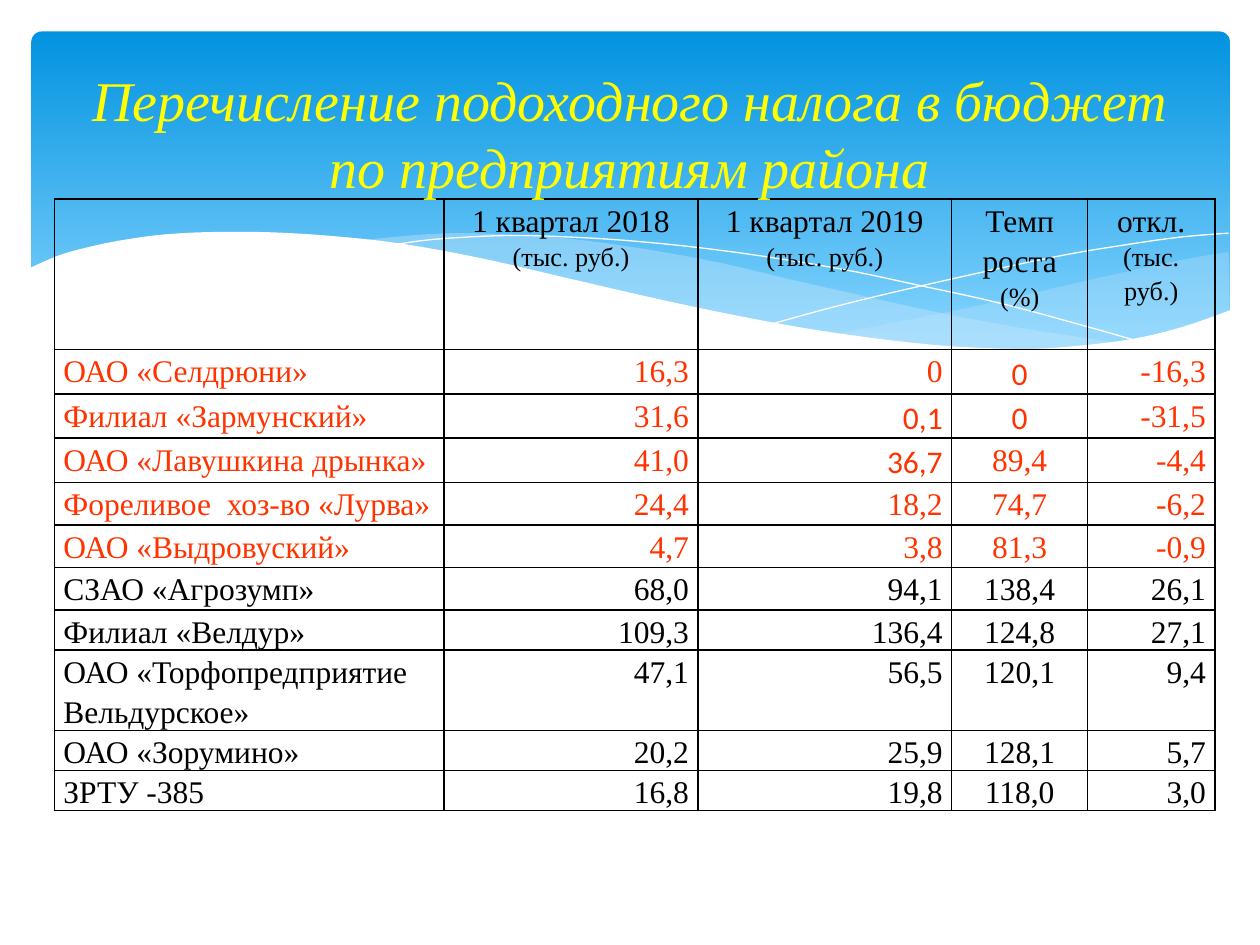
from dataclasses import dataclass

from lxml import etree
from pptx import Presentation
from pptx.dml.color import RGBColor
from pptx.enum.shapes import MSO_SHAPE
from pptx.enum.text import MSO_ANCHOR, PP_ALIGN
from pptx.oxml.ns import qn
from pptx.util import Pt

ROUND_RECT = MSO_SHAPE.ROUNDED_RECTANGLE
MIDDLE = MSO_ANCHOR.MIDDLE
LEFT, CENTER, RIGHT = PP_ALIGN.LEFT, PP_ALIGN.CENTER, PP_ALIGN.RIGHT


@dataclass(frozen=True)
class Theme:
    sky_top: str = "0293E0"
    sky_bottom: str = "83D3FE"
    mist: str = "C6E7FC"
    white: str = "FFFFFF"
    title: str = "FFFF00"
    text: str = "000000"
    decline: str = "FF3300"
    font: str = "Times New Roman"
    alt_font: str = "Calibri"
    title_size: float = 32
    body_size: float = 18
    unit_size: float = 15


THEME = Theme()

# Wave edges as (x, y) knots in points; a smooth curve passes through them.
BACK_TOP = [(702, 144), (673, 149), (620, 160.6), (561, 174.2), (508, 185), (476, 191)]
BACK_BOTTOM = [(476, 191), (507.6, 195), (545, 198.7), (586, 200), (621, 198),
               (651.6, 193.7), (678, 186.5), (702.7, 177.8)]
MIDDLE_TOP = [(643, 196.6), (581, 187), (533.5, 178), (481, 166.3), (453, 160),
              (409.7, 149.8), (370, 142.6), (335, 137.5), (302.4, 134.6),
              (260, 133.2), (225.4, 135.4), (206, 137.5)]
MIDDLE_BOTTOM = [(206, 137.5), (246, 143.3), (291, 152), (323.3, 159.8),
                 (381.6, 172.8), (432.7, 183.6), (478.8, 191.5), (519.8, 197.3),
                 (556.6, 199.4), (589, 200.2), (617, 199.4), (643, 196.6)]
FALLING_LINE = [(222.5, 140.4), (247.7, 136.8), (288.7, 134.6), (324, 135.4),
                (367.2, 138.2), (419, 144), (478.8, 153.4), (523.4, 162.7),
                (572.4, 173.5), (625.7, 187.9), (653, 195.8)]
RISING_LINE = [(441.4, 185), (483.8, 173.5), (538.6, 160.6), (602, 146.9),
               (644.4, 139.7), (675.4, 135.4), (702, 133.2)]
FRONT_TOP = [(703.4, 177.1), (676.8, 186.5), (647.3, 193.7), (612, 198),
             (582.5, 199.4), (535.7, 197.3), (481, 190.8), (434, 182.9), (381, 172),
             (321.8, 158.4), (281.5, 149), (244.8, 141.8), (210, 136.8),
             (165.6, 133.2), (127.4, 132.5), (95, 133.9), (68.4, 137.5),
             (48.2, 141.8), (33, 146.2), (16.6, 153.4)]
FRONT_BASE = [(16.6, 236.9), (703.4, 236.9)]

TITLE = "Перечисление подоходного налога в бюджет по предприятиям района"
# Each header line is a list of (text, size) runs.
BODY, UNIT = THEME.body_size, THEME.unit_size
HEADERS = [
    [],
    [[("1 квартал 2018", BODY)], [("(тыс. руб.)", UNIT)]],
    [[("1 квартал 2019", BODY)], [("(тыс. руб.)", UNIT)]],
    [[("Темп", BODY)], [("роста ", BODY), ("(%)", UNIT)]],
    [[("откл.", BODY)], [("(тыс. руб.)", UNIT)]],
]
ENTERPRISES = [
    ("ОАО «Селдрюни»", "16,3", "0", "0", "-16,3"),
    ("Филиал «Зармунский»", "31,6", "0,1", "0", "-31,5"),
    ("ОАО «Лавушкина дрынка»", "41,0", "36,7", "89,4", "-4,4"),
    ("Фореливое  хоз-во «Лурва»", "24,4", "18,2", "74,7", "-6,2"),
    ("ОАО «Выдровуский»", "4,7", "3,8", "81,3", "-0,9"),
    ("СЗАО «Агрозумп»", "68,0", "94,1", "138,4", "26,1"),
    ("Филиал «Велдур»", "109,3", "136,4", "124,8", "27,1"),
    ("ОАО «Торфопредприятие Вельдурское»", "47,1", "56,5", "120,1", "9,4"),
    ("ОАО «Зорумино»", "20,2", "25,9", "128,1", "5,7"),
    ("ЗРТУ -385", "16,8", "19,8", "118,0", "3,0"),
]
ALT_FONT_CELLS = {(1, 3), (2, 2), (2, 3), (3, 2)}
ALIGNMENTS = [LEFT, RIGHT, RIGHT, CENTER, RIGHT]
COLUMN_WIDTHS = [222.6, 145, 145, 77.8, 72.6]
ROW_HEIGHTS = [86] + [25.2] * 3 + [24.3] * 3 + [22.8, 45.8, 22.8, 22.8]


def rgb(value):
    return RGBColor.from_string(value)


def apply_format(target, values):
    for key, value in values.items():
        setattr(target, key, value)


def smooth(knots, steps=4):
    """Sample a Catmull-Rom curve through the knots."""
    padded = [knots[0], *knots, knots[-1]]
    curve = [knots[0]]
    for a, b, c, d in zip(padded, padded[1:], padded[2:], padded[3:]):
        for step in range(1, steps + 1):
            t = step / steps
            curve.append(tuple(
                (2 * q + (r - p) * t + (2 * p - 5 * q + 4 * r - s) * t ** 2
                 + (3 * q - p - 3 * r + s) * t ** 3) / 2
                for p, q, r, s in zip(a, b, c, d)))
    return curve


def add_outline(slide, points, closed):
    start, *rest = [(Pt(x), Pt(y)) for x, y in points]
    builder = slide.shapes.build_freeform(*start)
    builder.add_line_segments(rest, close=closed)
    outline = builder.convert_to_shape()
    outline.shadow.inherit = False
    return outline


def add_wave(slide, points, color, opacity=100):
    wave = add_outline(slide, points, True)
    wave.line.fill.background()
    wave.fill.solid()
    wave.fill.fore_color.rgb = rgb(color)
    if opacity < 100:
        color_node = wave.fill._xPr.find(qn("a:solidFill"))[0]
        etree.SubElement(color_node, qn("a:alpha"), val=str(opacity * 1000))


def add_curve(slide, knots):
    curve = add_outline(slide, smooth(knots), False)
    curve.fill.background()
    curve.line.color.rgb = rgb(THEME.white)
    curve.line.width = Pt(0)


def add_sky(slide):
    sky = slide.shapes.add_shape(ROUND_RECT, Pt(18), Pt(18), Pt(684.7), Pt(194.4))
    sky.adjustments[0] = 0.03
    sky.shadow.inherit = False
    sky.line.fill.background()
    sky.fill.gradient()
    sky.fill.gradient_angle = 270
    stops = [(0, THEME.sky_top), (0.9, THEME.sky_bottom)]
    for stop, (position, color) in zip(sky.fill.gradient_stops, stops):
        stop.position = position
        stop.color.rgb = rgb(color)


def add_run(paragraph, text, size, color, font=THEME.font, italic=False):
    run = paragraph.add_run()
    run.text = text
    apply_format(run.font, {"name": font, "size": Pt(size), "italic": italic})
    run.font.color.rgb = rgb(color)


def add_title(slide):
    title = slide.shapes.add_textbox(Pt(36), Pt(26.6), Pt(648), Pt(98.6))
    frame = title.text_frame
    apply_format(frame, {"word_wrap": True, "vertical_anchor": MIDDLE})
    paragraph = frame.paragraphs[0]
    paragraph.alignment = CENTER
    add_run(paragraph, TITLE, THEME.title_size, THEME.title, italic=True)


def style_cell(cell):
    apply_format(cell, {"margin_left": Pt(5.1), "margin_right": Pt(5.1),
                        "margin_top": 0, "margin_bottom": 0})
    properties = cell._tc.get_or_add_tcPr()
    for side in ("lnL", "lnR", "lnT", "lnB"):
        border = etree.SubElement(properties, qn(f"a:{side}"), w=str(Pt(1)))
        fill = etree.SubElement(border, qn("a:solidFill"))
        etree.SubElement(fill, qn("a:srgbClr"), val=THEME.text)
    cell.fill.background()


def fill_cell(cell, lines, alignment, color, font=THEME.font):
    for index, runs in enumerate(lines):
        frame = cell.text_frame
        paragraph = frame.add_paragraph() if index else frame.paragraphs[0]
        apply_format(paragraph, {"alignment": alignment, "line_spacing": 1.15})
        for text, size in runs:
            add_run(paragraph, text, size, color, font)


def add_tax_table(slide):
    table = slide.shapes.add_table(
        len(ROW_HEIGHTS), len(COLUMN_WIDTHS), Pt(31.2), Pt(113.8),
        Pt(sum(COLUMN_WIDTHS)), Pt(sum(ROW_HEIGHTS))).table
    apply_format(table, {"first_row": False, "horz_banding": False})
    for column, width in zip(table.columns, COLUMN_WIDTHS):
        column.width = Pt(width)
    for row, height in zip(table.rows, ROW_HEIGHTS):
        row.height = Pt(height)
    for cell in table.iter_cells():
        style_cell(cell)
    for col, lines in enumerate(HEADERS):
        fill_cell(table.cell(0, col), lines, CENTER, THEME.text)
    for row, values in enumerate(ENTERPRISES, start=1):
        color = THEME.decline if values[-1].startswith("-") else THEME.text
        for col, value in enumerate(values):
            font = THEME.alt_font if (row, col) in ALT_FONT_CELLS else THEME.font
            fill_cell(table.cell(row, col), [[(value, BODY)]], ALIGNMENTS[col], color, font)


def main():
    presentation = Presentation()
    apply_format(presentation, {"slide_width": Pt(720), "slide_height": Pt(540)})
    slide = presentation.slides.add_slide(presentation.slide_layouts[6])
    add_sky(slide)
    add_wave(slide, smooth(BACK_TOP) + smooth(BACK_BOTTOM), THEME.mist, 29)
    add_wave(slide, smooth(MIDDLE_TOP) + smooth(MIDDLE_BOTTOM), THEME.mist, 40)
    add_curve(slide, FALLING_LINE)
    add_curve(slide, RISING_LINE)
    add_wave(slide, smooth(FRONT_TOP) + FRONT_BASE, THEME.white)
    add_tax_table(slide)
    add_title(slide)
    presentation.save("out.pptx")


if __name__ == "__main__":
    main()
